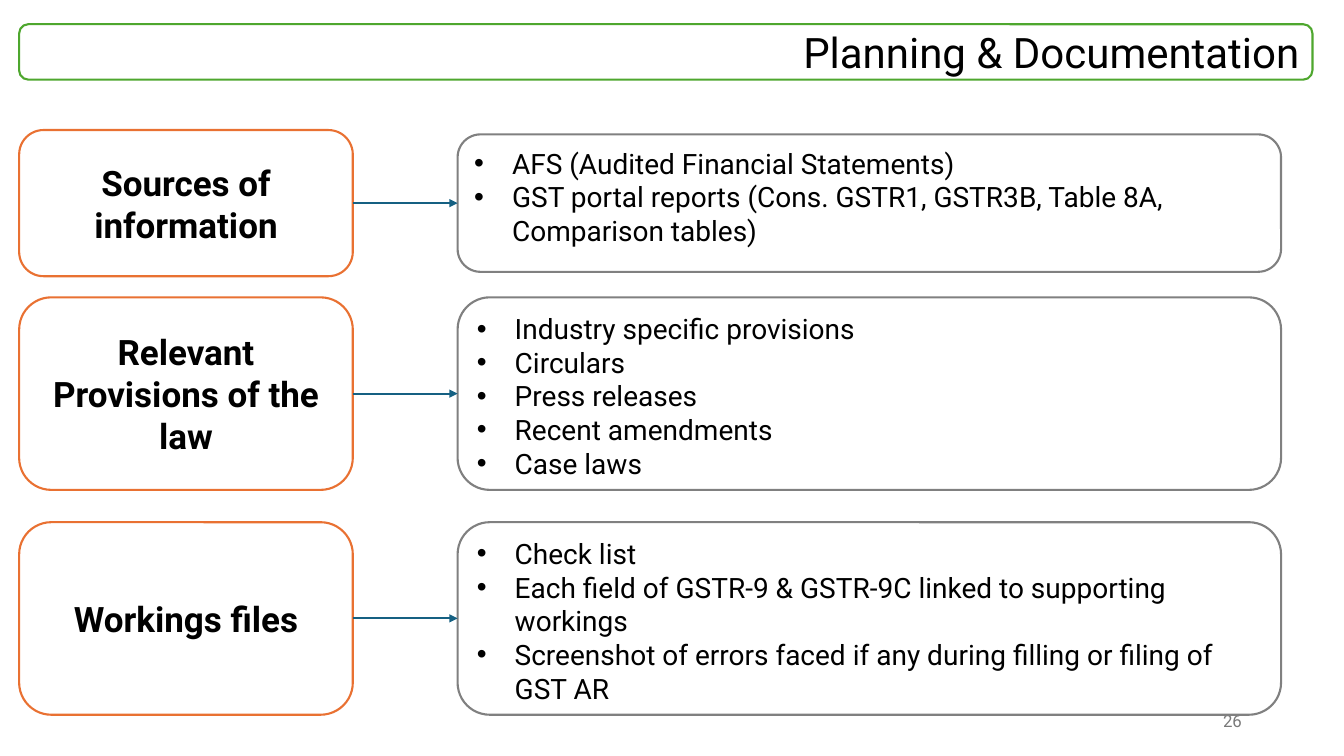
from dataclasses import dataclass

from lxml import etree
from pptx import Presentation
from pptx.dml.color import RGBColor
from pptx.enum import shapes, text
from pptx.oxml.ns import qn
from pptx.util import Pt

FONT = "Roboto"
BLACK, WHITE, GREY = "000000", "FFFFFF", "808080"
GREEN, ORANGE, BLUE = "4EA72E", "E97132", "156082"
LINE_WIDTH = 1.5
TOPIC_LEFT, TOPIC_WIDTH = 13.7, 238.3
DETAIL_LEFT, DETAIL_WIDTH = 326.9, 588.2
BULLET_INDENT = 27


@dataclass
class Row:
    topic: str
    details: list[str]
    top: float
    height: float = 137.5
    detail_margin: float = 0  # how much shorter the detail box is at each end


ROWS = [
    Row("Sources of information",
        ["AFS (Audited Financial Statements)",
         "GST portal reports (Cons. GSTR1, GSTR3B, Table 8A, Comparison tables)"],
        top=92.9, height=104.4, detail_margin=3.1),
    Row("Relevant Provisions of the law",
        ["Industry specific provisions", "Circulars", "Press releases",
         "Recent amendments", "Case laws"],
        top=212.4),
    Row("Workings files",
        ["Check list",
         "Each field of GSTR-9 & GSTR-9C linked to supporting workings",
         "Screenshot of errors faced if any during filling or filing of GST AR"],
        top=373),
]


def color(value: str) -> RGBColor:
    return RGBColor.from_string(value)


def write(box, lines: list[str], size: float, align, anchor,
          bold: bool = False, bullets: bool = False, ink: str = BLACK) -> None:
    frame = box.text_frame
    frame.word_wrap = True
    frame.vertical_anchor = anchor
    frame.text = "\n".join(lines)
    for para in frame.paragraphs:
        para.alignment = align
        para.font.name = FONT
        para.font.size = Pt(size)
        para.font.bold = bold
        para.font.color.rgb = color(ink)
        if bullets:
            add_bullet(para)


def add_bullet(para) -> None:
    props = para._p.get_or_add_pPr()
    props.set("marL", str(Pt(BULLET_INDENT)))
    props.set("indent", str(-Pt(BULLET_INDENT)))
    bullet_font = etree.Element(qn("a:buFont"), typeface="Arial")
    bullet = etree.Element(qn("a:buChar"), char="•")
    props.insert_element_before(bullet_font, "a:tabLst", "a:defRPr", "a:extLst")
    props.insert_element_before(bullet, "a:tabLst", "a:defRPr", "a:extLst")


def add_box(page, left: float, top: float, width: float, height: float, outline: str):
    box = page.shapes.add_shape(shapes.MSO_SHAPE.ROUNDED_RECTANGLE,
                                Pt(left), Pt(top), Pt(width), Pt(height))
    box.shadow.inherit = False
    box.fill.solid()
    box.fill.fore_color.rgb = color(WHITE)
    box.line.color.rgb = color(outline)
    box.line.width = Pt(LINE_WIDTH)
    return box


def add_arrow(page, start: float, end: float, y: float) -> None:
    arrow = page.shapes.add_connector(shapes.MSO_CONNECTOR.STRAIGHT,
                                      Pt(start), Pt(y), Pt(end), Pt(y))
    arrow.line.color.rgb = color(BLUE)
    arrow.line.width = Pt(LINE_WIDTH)
    etree.SubElement(arrow.line._get_or_add_ln(), qn("a:tailEnd"), type="triangle")
    etree.SubElement(arrow._element.spPr, qn("a:effectLst"))


def add_row(page, row: Row) -> None:
    """Draw a topic box, its detail box and the arrow between them."""
    topic = add_box(page, TOPIC_LEFT, row.top, TOPIC_WIDTH, row.height, ORANGE)
    write(topic, [row.topic], 25, text.PP_ALIGN.CENTER, text.MSO_ANCHOR.MIDDLE, bold=True)
    detail = add_box(page, DETAIL_LEFT, row.top + row.detail_margin,
                     DETAIL_WIDTH, row.height - 2 * row.detail_margin, GREY)
    write(detail, row.details, 20, text.PP_ALIGN.LEFT, text.MSO_ANCHOR.TOP, bullets=True)
    add_arrow(page, TOPIC_LEFT + TOPIC_WIDTH, DETAIL_LEFT, row.top + row.height / 2)


def main() -> None:
    deck = Presentation()
    deck.slide_width, deck.slide_height = Pt(960), Pt(540)
    page = deck.slides.add_slide(deck.slide_layouts[6])

    title = add_box(page, TOPIC_LEFT, 17.3, 923.8, 39.6, GREEN)
    write(title, ["Planning & Documentation"], 30,
          text.PP_ALIGN.RIGHT, text.MSO_ANCHOR.MIDDLE)

    # The last detail box overlaps the page number, so the number goes first.
    number = page.shapes.add_textbox(Pt(678.2), Pt(500.4), Pt(216), Pt(28.8))
    write(number, ["26"], 12, text.PP_ALIGN.RIGHT, text.MSO_ANCHOR.MIDDLE, ink="797979")

    for row in ROWS:
        add_row(page, row)

    deck.save("out.pptx")


if __name__ == "__main__":
    main()
